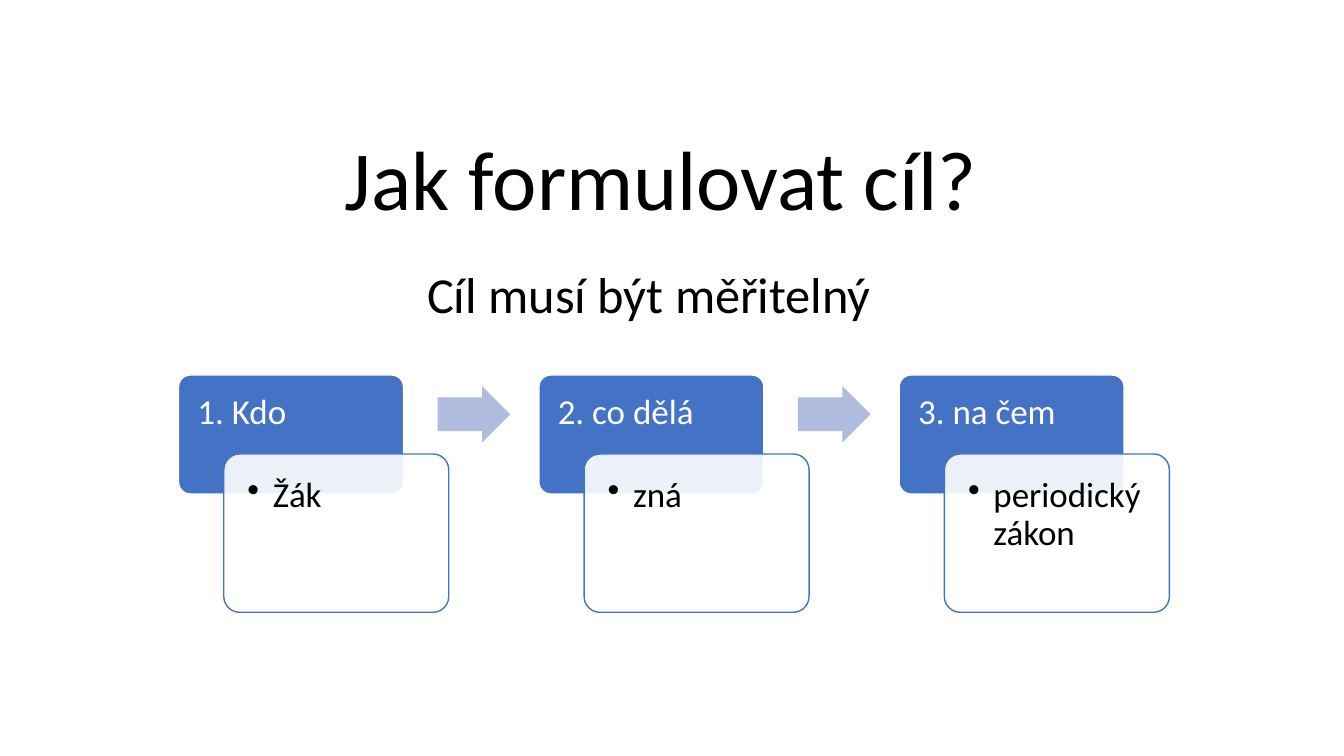
from lxml.etree import SubElement
from pptx import Presentation
from pptx.dml.color import RGBColor
from pptx.enum.shapes import MSO_SHAPE
from pptx.enum.text import MSO_ANCHOR, MSO_AUTO_SIZE, PP_ALIGN
from pptx.oxml.ns import qn
from pptx.util import Cm, Pt

BLUE, PALE, WHITE, BLACK = "4472C4", "B0BCDE", "FFFFFF", "000000"
STEPS = [("1. Kdo", "Žák"), ("2. co dělá", "zná"), ("3. na čem", "periodický zákon")]
LEFT, TOP, PITCH = 4.5, 9.45, 9.08
WIDE = 5.67


def paint(fmt, color):
    fmt.solid()
    fmt.fore_color.rgb = RGBColor.from_string(color)


def fade(shape, percent):
    """Set the opacity of a solid fill."""
    color = shape.fill._xPr.find(qn("a:solidFill"))[0]
    SubElement(color, qn("a:alpha"), val=str(percent * 1000))


def bullet(para, indent):
    props = para._p.get_or_add_pPr()
    props.set("marL", str(Cm(indent)))
    props.set("indent", str(-Cm(indent)))
    SubElement(props, qn("a:buChar"), char="•")


def write(shape, text, size=25, color=BLACK, align=PP_ALIGN.LEFT,
          anchor=MSO_ANCHOR.TOP, inset=None):
    """Fill a shape with one paragraph; inset is left, top, right, bottom in cm."""
    frame = shape.text_frame
    frame.word_wrap = True
    frame.auto_size = MSO_AUTO_SIZE.NONE
    frame.vertical_anchor = anchor
    if inset:
        (frame.margin_left, frame.margin_top,
         frame.margin_right, frame.margin_bottom) = map(Cm, inset)
    para = frame.paragraphs[0]
    para.text = text
    para.alignment = align
    para.line_spacing = 0.9
    font = para.runs[0].font
    font.name, font.size = "Calibri", Pt(size)
    paint(font.fill, color)
    return para


def block(slide, kind, box, fill, line=None, adjust=()):
    shape = slide.shapes.add_shape(kind, *map(Cm, box))
    shape.shadow.inherit = False
    paint(shape.fill, fill)
    if line:
        paint(shape.line.fill, line)
        shape.line.width = Pt(1)
    else:
        shape.line.fill.background()
    for i, value in enumerate(adjust):
        shape.adjustments[i] = value
    return shape


def step(slide, left, head, detail):
    """Draw a heading card with its overlapping detail card."""
    card = block(slide, MSO_SHAPE.ROUNDED_RECTANGLE, (left, TOP, WIDE, 3),
                 BLUE, WHITE, [0.1])
    write(card, head, color=WHITE, inset=(0.39, 0.39, 0.39, 0.25))
    card = block(slide, MSO_SHAPE.ROUNDED_RECTANGLE,
                 (left + 1.14, TOP + 1.99, WIDE, 3.99), WHITE, BLUE, [0.1])
    fade(card, 90)
    bullet(write(card, detail, inset=[0.48] * 4), 0.64)


def main():
    deck = Presentation()
    deck.slide_width, deck.slide_height = Cm(33.87), Cm(19.05)
    slide = deck.slides.add_slide(deck.slide_layouts[5])

    title = slide.shapes.title
    title.left, title.top, title.width, title.height = map(Cm, (1.37, 2.57, 30.58, 3.33))
    centre = {"align": PP_ALIGN.CENTER, "anchor": MSO_ANCHOR.BOTTOM}
    write(title, "Jak formulovat cíl?", size=60, **centre)

    for i, (head, detail) in enumerate(STEPS):
        left = LEFT + i * PITCH
        step(slide, left, head, detail)
        if i < len(STEPS) - 1:
            block(slide, MSO_SHAPE.RIGHT_ARROW, (left + 6.53, TOP + 0.28, 1.83, 1.42),
                  PALE, adjust=[0.6, 0.5])

    note = slide.shapes.add_textbox(*map(Cm, (1.07, 6.38, 30.58, 1.93)))
    write(note, "Cíl musí být měřitelný", size=36, **centre)
    deck.save("out.pptx")


if __name__ == "__main__":
    main()
